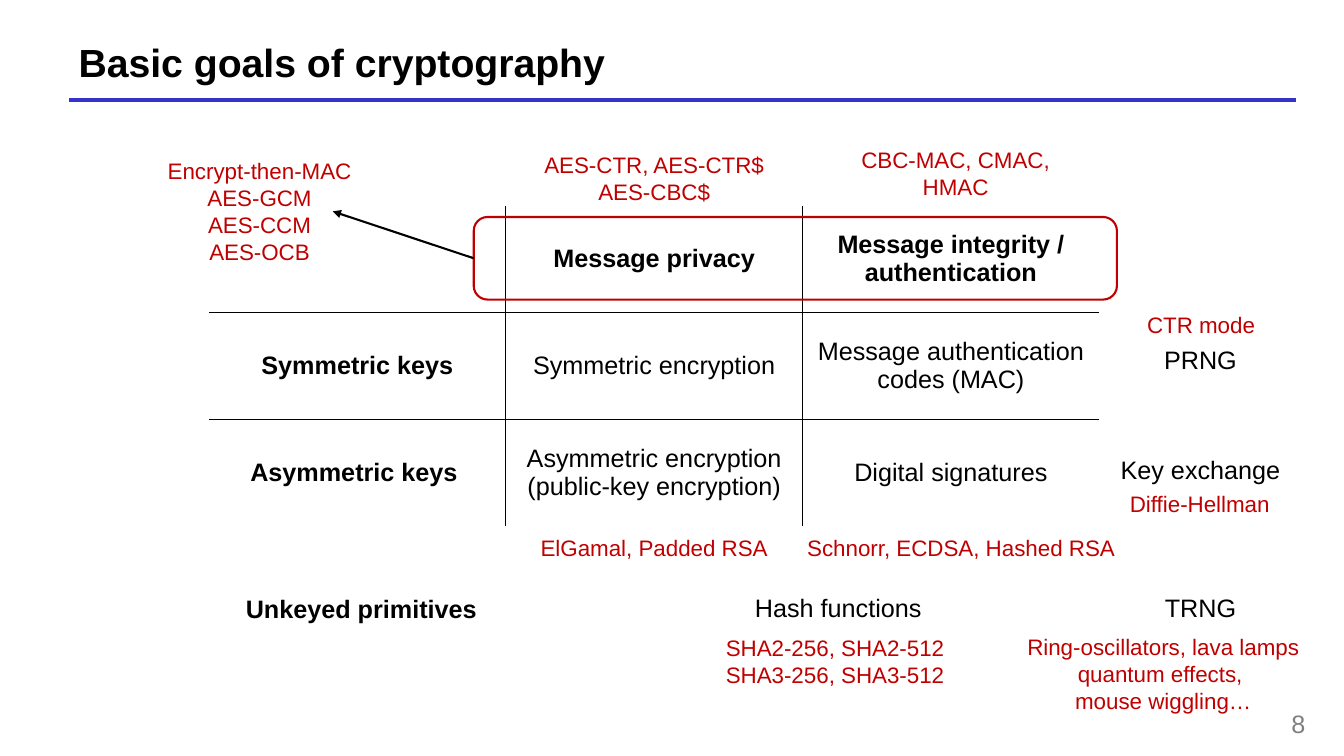
import pptx
import pptx.dml.color
import pptx.enum.shapes
import pptx.enum.text
import pptx.oxml
import pptx.oxml.ns
import pptx.util
from dataclasses import dataclass

Pt = pptx.util.Pt
RGB = pptx.dml.color.RGBColor.from_string
ALIGN = pptx.enum.text.PP_ALIGN
ANCHOR = pptx.enum.text.MSO_ANCHOR
SHAPE = pptx.enum.shapes.MSO_SHAPE
NS = pptx.oxml.ns.nsdecls("a")


@dataclass(frozen=True)
class Theme:
    font: str = "Arial"
    ink: str = "000000"
    paper: str = "FFFFFF"
    rule: str = "3333CC"
    example: str = "C00000"
    muted: str = "808080"
    title_size: int = 28
    body_size: int = 18
    example_size: int = 16


class Deck:
    def __init__(self, prs, theme):
        self.theme = theme
        self.s = prs.slides.add_slide(prs.slide_layouts[6])

    def set_text(self, tf, text, size=None, color=None, bold=False, align=ALIGN.CENTER):
        t = self.theme
        font = {"name": t.font, "size": Pt(size or t.body_size), "bold": bold}
        for i, line in enumerate(text.split("\n")):
            p = tf.paragraphs[0] if i == 0 else tf.add_paragraph()
            p.alignment = align
            r = p.add_run()
            r.text = line
            for name, value in font.items():
                setattr(r.font, name, value)
            r.font.color.rgb = RGB(color or t.ink)

    def text(self, x, y, w, h, text, wrap=True, anchor=ANCHOR.TOP, **style):
        tf = self.s.shapes.add_textbox(Pt(x), Pt(y), Pt(w), Pt(h)).text_frame
        for name, value in {"word_wrap": wrap, "vertical_anchor": anchor}.items():
            setattr(tf, name, value)
        self.set_text(tf, text, **style)

    def label(self, cx, y, w, text, size=None, color=None):
        """Unwrapped text centred on cx, as tall as its lines."""
        size = size or self.theme.body_size
        h = 7.2 + 1.2 * size * len(text.split("\n"))
        self.text(cx - w / 2, y, w, h, text, wrap=False, size=size, color=color)

    def example(self, cx, y, w, text):
        self.label(cx, y, w, text, self.theme.example_size, self.theme.example)

    def box(self, kind, x, y, w, h, color, weight):
        sp = self.s.shapes.add_shape(kind, Pt(x), Pt(y), Pt(w), Pt(h))
        sp.shadow.inherit = False
        sp.fill.background()
        sp.line.color.rgb = RGB(color)
        sp.line.width = Pt(weight)
        return sp

    def line(self, x1, y1, x2, y2, color, weight, arrow=False):
        c = self.s.shapes.add_connector(
            pptx.enum.shapes.MSO_CONNECTOR.STRAIGHT, Pt(x1), Pt(y1), Pt(x2), Pt(y2))
        c.line.color.rgb = RGB(color)
        c.line.width = Pt(weight)
        if arrow:
            c._element.spPr.find(pptx.oxml.ns.qn("a:ln")).append(
                pptx.oxml.parse_xml(f'<a:tailEnd {NS} type="triangle"/>'))
        c._element.spPr.append(pptx.oxml.parse_xml(f"<a:effectLst {NS}/>"))
        return c

    def borders(self, cell, shown):
        """Draw the sides marked in shown, clear the others."""
        tcPr = cell._tc.get_or_add_tcPr()
        for i, (side, on) in enumerate(shown.items()):
            paint = (f'<a:solidFill><a:srgbClr val="{self.theme.ink}"/></a:solidFill>'
                     if on else "<a:noFill/>")
            tcPr.insert(i, pptx.oxml.parse_xml(
                f'<a:ln{side} {NS} w="{Pt(1)}">{paint}</a:ln{side}>'))

    def table(self, x, y, col_w, row_h, rows):
        n, m = len(rows), len(rows[0])
        tbl = self.s.shapes.add_table(
            n, m, Pt(x), Pt(y), Pt(col_w * m), Pt(row_h * n)).table
        for flag in ("first_row", "horz_banding"):
            setattr(tbl, flag, False)
        for row in tbl.rows:
            row.height = Pt(row_h)
        for col in tbl.columns:
            col.width = Pt(col_w)
        for i, row in enumerate(rows):
            for j, text in enumerate(row):
                cell = tbl.cell(i, j)
                cell.vertical_anchor = ANCHOR.MIDDLE
                cell.fill.background()
                self.borders(cell, {"L": j > 0, "R": j < m - 1, "T": i > 0, "B": i < n - 1})
                if text:
                    self.set_text(cell.text_frame, text, bold=i == 0 or j == 0)


def main():
    prs = pptx.Presentation()
    prs.slide_width, prs.slide_height = Pt(960), Pt(540)
    theme = Theme()
    deck = Deck(prs, theme)

    # Title, rule and page number
    deck.line(49, 71.5, 926, 71.5, theme.rule, 3)
    deck.text(49, 26, 877, 36, "Basic goals of cryptography", anchor=ANCHOR.MIDDLE,
              size=theme.title_size, bold=True, align=ALIGN.LEFT)
    deck.text(895, 502.5, 44.5, 26, "8", color=theme.muted, align=ALIGN.RIGHT)

    # Goals by key type
    deck.table(149.3, 146.9, 212, 76.3, [
        ["", "Message privacy", "Message integrity / authentication"],
        ["Symmetric keys", "Symmetric encryption", "Message authentication codes (MAC)"],
        ["Asymmetric keys ", "Asymmetric encryption (public-key encryption)",
         "Digital signatures"],
    ])

    # Both goals together: authenticated encryption
    goals = deck.box(SHAPE.ROUNDED_RECTANGLE, 338.4, 155, 459.4, 59, theme.example, 1.5)
    arrow = deck.line(338.4, 184.5, 237.6, 151, theme.ink, 1.5, arrow=True)
    arrow.begin_connect(goals, 1)

    # Example schemes
    for cx, y, w, text in [
        (185.4, 108.7, 148, "Encrypt-then-MAC\nAES-GCM\nAES-CCM\nAES-OCB"),
        (467.3, 104.4, 173, "AES-CTR, AES-CTR$\nAES-CBC$"),
        (682.6, 100.8, 151, "CBC-MAC, CMAC,\nHMAC"),
        (467.3, 378, 179, "ElGamal, Padded RSA"),
        (688.3, 378, 240, "Schnorr, ECDSA, Hashed RSA "),
        (857, 346.3, 115, "Diffie-Hellman"),
        (596.5, 449.3, 172, "SHA2-256, SHA2-512\nSHA3-256, SHA3-512"),
        (857.9, 218.9, 93, "CTR mode"),
        (830.9, 448.6, 259, "Ring-oscillators, lava lamps\nquantum effects, \nmouse wiggling…"),
    ]:
        deck.example(cx, y, w, text)

    # Further primitives
    for cx, y, w, text in [
        (857.5, 321.1, 130, "Key exchange"),
        (857.5, 242.6, 67, "PRNG"),
        (857.5, 419.8, 66, "TRNG"),
        (598.7, 419.8, 135, "Hash functions"),
    ]:
        deck.label(cx, y, w, text)

    # Unkeyed row heading
    heading = deck.box(SHAPE.RECTANGLE, 168.5, 412.6, 198, 44, theme.paper, 1)
    heading.text_frame.vertical_anchor = ANCHOR.MIDDLE
    deck.set_text(heading.text_frame, "Unkeyed primitives", bold=True, align=ALIGN.LEFT)

    prs.save("out.pptx")


if __name__ == "__main__":
    main()
